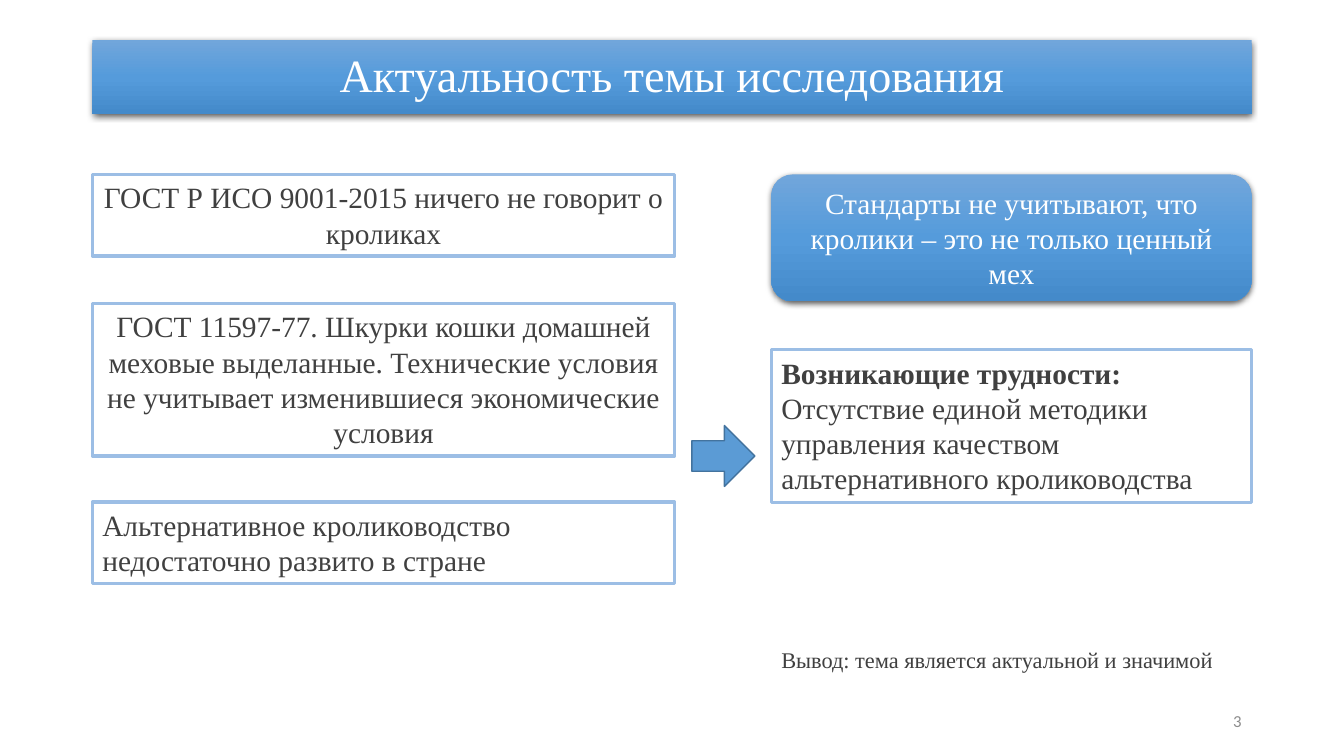
from lxml import etree
from pptx import Presentation
from pptx.dml.color import RGBColor
from pptx.enum.shapes import MSO_SHAPE
from pptx.enum.text import MSO_ANCHOR, MSO_AUTO_SIZE, PP_ALIGN
from pptx.oxml.ns import qn
from pptx.util import Pt

RECT, ROUNDED, ARROW = MSO_SHAPE.RECTANGLE, MSO_SHAPE.ROUNDED_RECTANGLE, MSO_SHAPE.DOWN_ARROW
LEFT, CENTER, RIGHT, JUSTIFY = PP_ALIGN.LEFT, PP_ALIGN.CENTER, PP_ALIGN.RIGHT, PP_ALIGN.JUSTIFY
TOP, MIDDLE = MSO_ANCHOR.TOP, MSO_ANCHOR.MIDDLE

COLORS = {
    "white": "FFFFFF", "text": "404040", "number": "8C8C8C", "border": "9CBEE5",
    "arrow": "5B9BD5", "arrow_edge": "43739E", "shadow": "000000",
    "grad_top": "71A6DB", "grad_mid": "559BDB", "grad_end": "448ACA",
}
FONT = "Times New Roman"

# Column grid, in points
LEFT_X, LEFT_W = 66, 416
RIGHT_X, RIGHT_W = 551, 343
FULL_W = RIGHT_X + RIGHT_W - LEFT_X


def color(name):
    return RGBColor.from_string(COLORS[name])


def write(shape, *lines, size=21, font=FONT, ink="text", align=LEFT,
          anchor=TOP, spacing=None, bold_first=False):
    """Fill a shape with one paragraph per line."""
    frame = shape.text_frame
    frame.word_wrap = True
    frame.auto_size = MSO_AUTO_SIZE.NONE
    frame.vertical_anchor = anchor
    for index, line in enumerate(lines):
        paragraph = frame.add_paragraph() if index else frame.paragraphs[0]
        paragraph.alignment = align
        if spacing:
            paragraph.line_spacing = spacing
        run = paragraph.add_run()
        run.text = line
        run.font.size = Pt(size)
        run.font.name = font
        run.font.bold = bold_first and index == 0
        run.font.color.rgb = color(ink)


def place(shape, x, y, width, height):
    shape.left, shape.top = Pt(x), Pt(y)
    shape.width, shape.height = Pt(width), Pt(height)


def make_glossy(shape):
    """Blue vertical gradient with a soft shadow below."""
    shape.fill.gradient()
    shape.fill.gradient_angle = 270
    stops = shape._element.spPr.find(".//" + qn("a:gsLst"))
    for stop in list(stops):
        stops.remove(stop)
    for position, name in ((0, "grad_top"), (50, "grad_mid"), (100, "grad_end")):
        stop = etree.SubElement(stops, qn("a:gs"), pos=str(position * 1000))
        etree.SubElement(stop, qn("a:srgbClr"), val=COLORS[name])
    shape.line.fill.background()
    shape.shadow.inherit = False
    effects = shape._element.spPr.find(qn("a:effectLst"))
    shadow = etree.SubElement(effects, qn("a:outerShdw"), blurRad=str(Pt(4.5)),
                              dist=str(Pt(1.5)), dir="5400000", rotWithShape="0")
    tint = etree.SubElement(shadow, qn("a:srgbClr"), val=COLORS["shadow"])
    etree.SubElement(tint, qn("a:alpha"), val="63000")


def add_flat(slide, kind, x, y, width, height, fill="white", edge=None, weight=2.25):
    shape = slide.shapes.add_shape(kind, Pt(x), Pt(y), Pt(width), Pt(height))
    shape.shadow.inherit = False
    shape.fill.solid()
    shape.fill.fore_color.rgb = color(fill)
    if edge:
        shape.line.color.rgb = color(edge)
        shape.line.width = Pt(weight)
    else:
        shape.line.fill.background()
    return shape


def main():
    prs = Presentation()
    prs.slide_width, prs.slide_height = Pt(960), Pt(540)
    slide = prs.slides.add_slide(prs.slide_layouts[5])

    # Title banner
    title = slide.shapes.title
    place(title, LEFT_X, 28.8, FULL_W, 52.6)
    make_glossy(title)
    write(title, "Актуальность темы исследования", size=33, ink="white",
          align=CENTER, anchor=MIDDLE, spacing=0.9)

    # Premises on the left
    premises = (
        (124.6, 58.3, CENTER, "ГОСТ Р ИСО 9001-2015 ничего не говорит о кроликах"),
        (216.7, 109, CENTER, "ГОСТ 11597-77. Шкурки кошки домашней меховые выделанные. "
         "Технические условия не учитывает изменившиеся экономические условия"),
        (358.6, 58.3, LEFT, "Альтернативное кролиководство недостаточно развито в стране"),
    )
    for y, height, align, premise in premises:
        box = add_flat(slide, RECT, LEFT_X, y, LEFT_W, height, edge="border")
        write(box, premise, align=align)

    # Standards gap and difficulties on the right
    gap = slide.shapes.add_shape(ROUNDED, Pt(RIGHT_X), Pt(124.6), Pt(RIGHT_W), Pt(90.7))
    make_glossy(gap)
    write(gap, "Стандарты не учитывают, что кролики – это не только ценный мех",
          ink="white", align=CENTER, anchor=MIDDLE)

    difficulties = add_flat(slide, RECT, RIGHT_X, 249.8, RIGHT_W, 109, edge="border")
    write(difficulties, "Возникающие трудности:",
          "Отсутствие единой методики управления качеством альтернативного кролиководства",
          bold_first=True)

    # Conclusion
    conclusion = add_flat(slide, RECT, RIGHT_X, 458, RIGHT_W, 26.6)
    write(conclusion, "Вывод: тема является актуальной и значимой", size=16, align=JUSTIFY)

    # Arrow from premises to difficulties
    arrow = add_flat(slide, ARROW, 495, 303.2, 43.5, 45, fill="arrow",
                     edge="arrow_edge", weight=1)
    arrow.rotation = 270

    # Slide number
    number = slide.shapes.add_textbox(Pt(678), Pt(500.5), Pt(216), Pt(28.8))
    write(number, "3", size=12, font="Calibri", ink="number", align=RIGHT, anchor=MIDDLE)

    prs.save("out.pptx")


if __name__ == "__main__":
    main()
